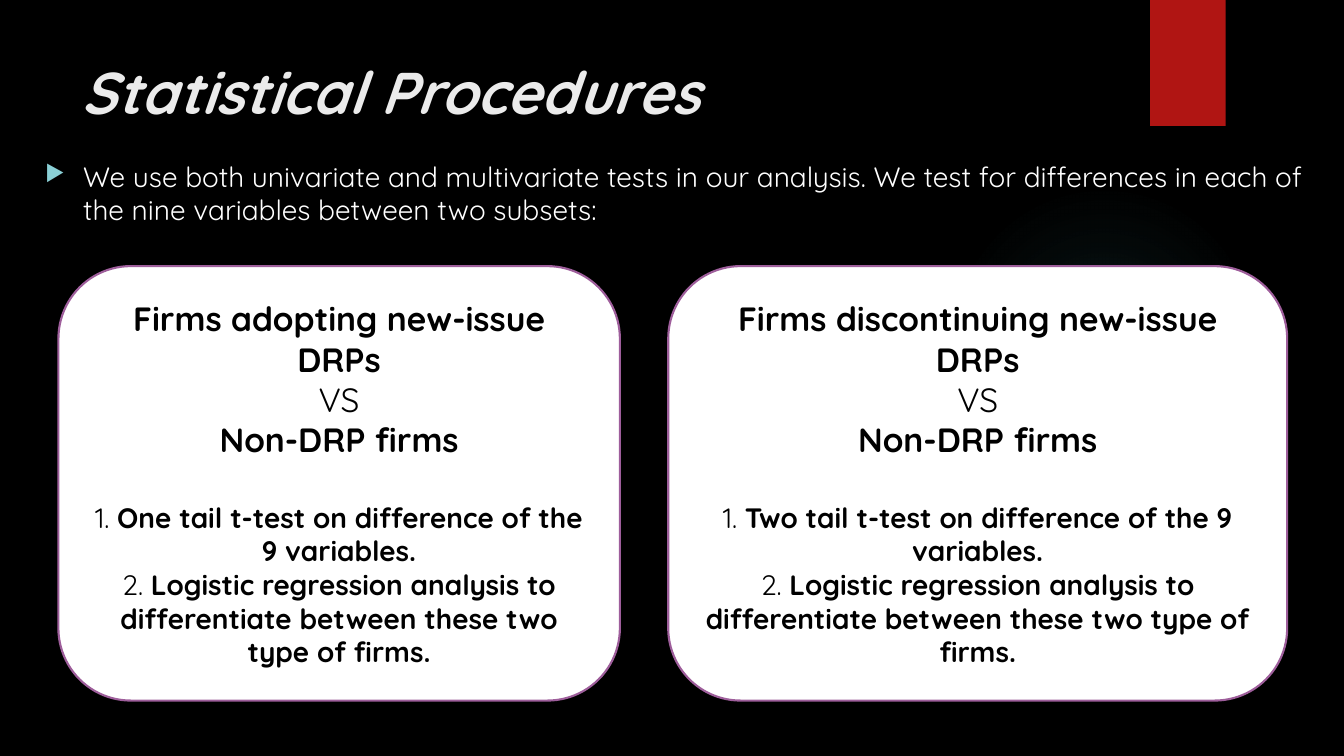
import pptx
import pptx.util
import pptx.dml.color
import pptx.enum.shapes
import pptx.enum.text
import pptx.oxml
import pptx.oxml.ns

Pt = pptx.util.Pt
SHAPES = pptx.enum.shapes.MSO_SHAPE
ANCHOR = pptx.enum.text.MSO_ANCHOR
ALIGN = pptx.enum.text.PP_ALIGN

# Content
FONT = "Quicksand"
TITLE = "Statistical Procedures"
INTRO = ("We use both univariate and multivariate tests in our analysis. "
         "We test for differences in each of the nine variables between two subsets:")
REGRESSION = "Logistic regression analysis to differentiate between these two type of firms."
CARDS = [  # left, width, group of firms, first test
    (41.76, 401.04, "Firms adopting new-issue DRPs",
     "One tail t-test on difference of the 9 variables."),
    (477.36, 442.08, "Firms discontinuing new-issue DRPs",
     "Two tail t-test on difference of the 9 variables."),
]
CARD_TOP, CARD_HEIGHT = 190.08, 310.32
GLOW_STOPS = [(0, 7), (36, 6), (69, 0)]  # position and opacity, percent


def color(hex_text):
    return pptx.dml.color.RGBColor.from_string(hex_text)


def set_font(font, size, hex_text, bold=False, italic=False):
    font.name, font.size, font.bold, font.italic = FONT, Pt(size), bold, italic
    font.color.rgb = color(hex_text)


def add_shape(kind, left, top, width, height, fill=None, line=None):
    shape = slide.shapes.add_shape(kind, Pt(left), Pt(top), Pt(width), Pt(height))
    shape.shadow.inherit = False
    if fill:
        shape.fill.solid()
        shape.fill.fore_color.rgb = color(fill)
    if line:
        shape.line.color.rgb = color(line)
        shape.line.width = Pt(1.5)
    else:
        shape.line.fill.background()
    return shape


def add_text(left, top, width, height, text):
    box = slide.shapes.add_textbox(Pt(left), Pt(top), Pt(width), Pt(height))
    box.text_frame.word_wrap = True
    paragraph = box.text_frame.paragraphs[0]
    paragraph.text = text
    return paragraph


def parse_drawing(tag, attributes, content):
    namespace = pptx.oxml.ns.nsdecls("a")
    return pptx.oxml.parse_xml(f"<a:{tag} {namespace} {attributes}>{content}</a:{tag}>")


presentation = pptx.Presentation()
presentation.slide_width, presentation.slide_height = Pt(960), Pt(540)
slide = presentation.slides.add_slide(presentation.slide_layouts[6])
slide.background.fill.solid()
slide.background.fill.fore_color.rgb = color("000000")

# Soft round glow and red tab
glow = add_shape(SHAPES.OVAL, 677.52, 131.76, 221.76, 221.76)
stops = "".join(
    f'<a:gs pos="{position * 1000}"><a:srgbClr val="50B9C1">'
    f'<a:alpha val="{opacity * 1000}"/></a:srgbClr></a:gs>'
    for position, opacity in GLOW_STOPS)
gradient = parse_drawing(
    "gradFill", "", f'<a:gsLst>{stops}</a:gsLst><a:path path="circle">'
    '<a:fillToRect l="50000" t="50000" r="50000" b="50000"/></a:path>')
glow.element.spPr.find(pptx.oxml.ns.qn("a:prstGeom")).addnext(gradient)
add_shape(SHAPES.RECTANGLE, 821.52, 0, 54, 90, "B01513")

# Title and introduction
set_font(add_text(51.12, 36, 740.88, 110.16, TITLE).font, 42, "EBEBEB", True, True)
intro = add_text(25.2, 110.16, 913.68, 57.6, INTRO)
properties = intro._p.get_or_add_pPr()
properties.set("marL", str(Pt(27)))
properties.set("indent", str(-Pt(27)))
for tag, attributes, content in [
        ("buClr", "", '<a:srgbClr val="8AD0D6"/>'),
        ("buSzPct", 'val="80000"', ""),
        ("buChar", 'char="▶"', "")]:
    properties.append(parse_drawing(tag, attributes, content))
set_font(intro.font, 20, "FFFFFF")

# Comparison cards
for left, width, firms, first_test in CARDS:
    card = add_shape(SHAPES.ROUNDED_RECTANGLE, left, CARD_TOP, width, CARD_HEIGHT,
                     "FFFFFF", "9E5E9B")
    frame = card.text_frame
    frame.word_wrap = True
    frame.vertical_anchor = ANCHOR.MIDDLE
    lines = [  # size, space before, runs of (text, bold)
        (24, 0, [(firms, True)]),
        (24, 0, [("VS", False)]),
        (24, 0, [("Non-DRP firms", True)]),
        (20, 29, [("1. ", False), (first_test, True)]),
        (20, 0, [("2. ", False), (REGRESSION, True)]),
    ]
    for index, (size, space, runs) in enumerate(lines):
        paragraph = frame.add_paragraph() if index else frame.paragraphs[0]
        paragraph.alignment = ALIGN.CENTER
        if space:
            paragraph.space_before = Pt(space)
        for text, bold in runs:
            run = paragraph.add_run()
            run.text = text
            set_font(run.font, size, "000000", bold)

presentation.save("out.pptx")
